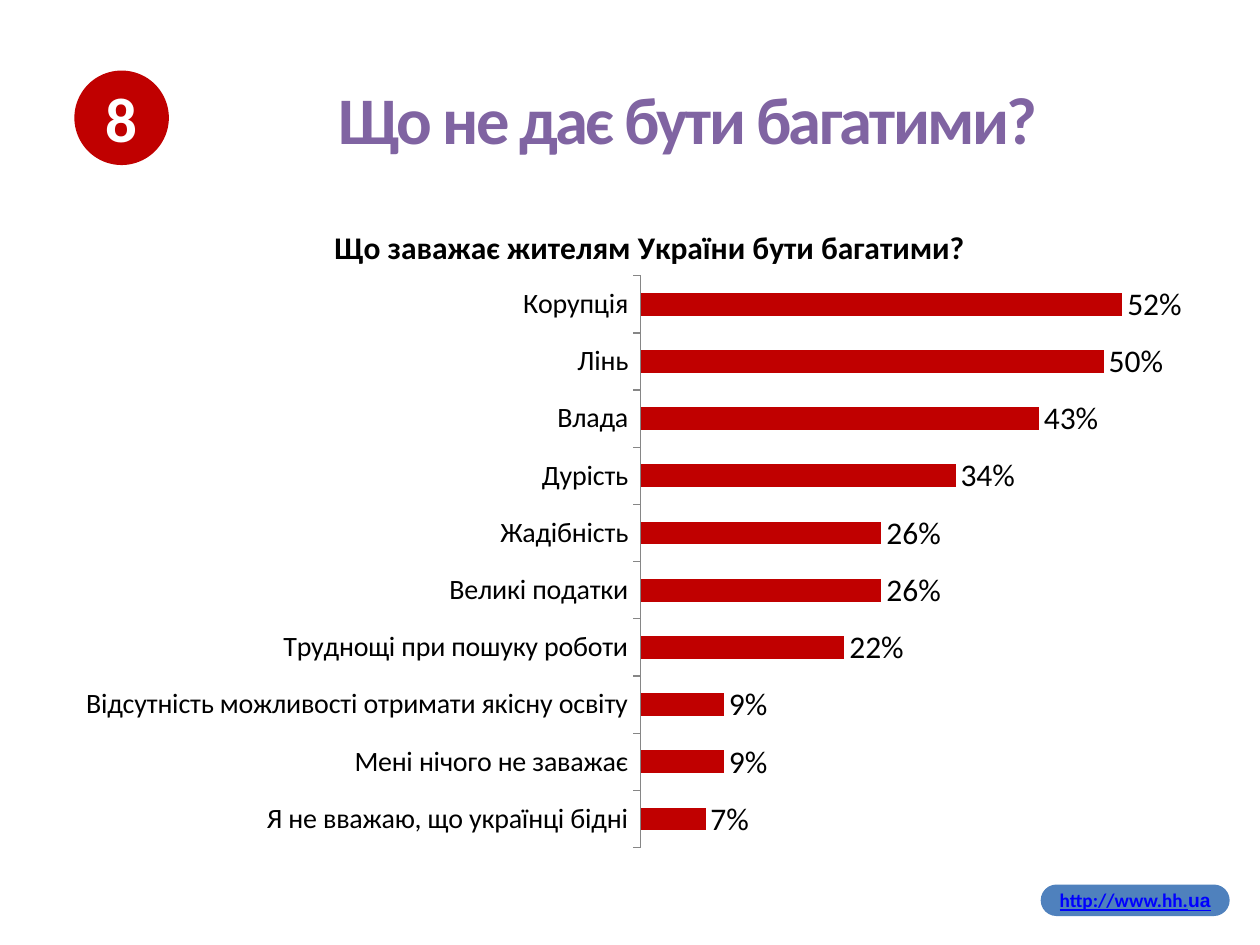
from dataclasses import dataclass

from lxml.etree import SubElement
from pptx import Presentation
from pptx.chart.data import CategoryChartData
from pptx.dml.color import RGBColor
from pptx.enum.chart import XL_CHART_TYPE as ChartType
from pptx.enum.chart import XL_LABEL_POSITION as LabelPosition
from pptx.enum.chart import XL_TICK_MARK as TickMark
from pptx.enum.shapes import MSO_SHAPE as Preset
from pptx.enum.text import MSO_ANCHOR as Anchor
from pptx.enum.text import PP_ALIGN as Align
from pptx.oxml.ns import qn
from pptx.util import Inches, Pt


@dataclass(frozen=True)
class Theme:
    font: str = "Calibri"
    link_end_font: str = "Arial"
    red: RGBColor = RGBColor(0xC0, 0x00, 0x00)
    purple: RGBColor = RGBColor(0x80, 0x64, 0xA2)
    blue: RGBColor = RGBColor(0x4F, 0x81, 0xBD)
    link: RGBColor = RGBColor(0x00, 0x00, 0xFF)
    white: RGBColor = RGBColor(0xFF, 0xFF, 0xFF)
    black: RGBColor = RGBColor(0x00, 0x00, 0x00)
    axis: RGBColor = RGBColor(0x86, 0x86, 0x86)
    title_size: int = 38
    badge_size: int = 36
    chart_size: int = 18
    category_size: int = 16
    address_size: int = 11


THEME = Theme()

OBSTACLES = [
    ("Корупція", 0.52),
    ("Лінь", 0.50),
    ("Влада", 0.43),
    ("Дурість", 0.34),
    ("Жадібність", 0.26),
    ("Великі податки", 0.26),
    ("Труднощі при пошуку роботи", 0.22),
    ("Відсутність можливості отримати якісну освіту", 0.09),
    ("Мені нічого не заважає", 0.09),
    ("Я не вважаю, що українці бідні", 0.07),
]


def place(shape, left, top, width, height):
    shape.left, shape.top = Inches(left), Inches(top)
    shape.width, shape.height = Inches(width), Inches(height)


def format_font(font, size, color, bold=False):
    font.name = THEME.font
    font.size = Pt(size)
    font.bold = bold
    font.color.rgb = color


def format_line(shape, size, color, spacing=0):
    """Centre the shape's single bold line; spacing is in points."""
    frame = shape.text_frame
    frame.word_wrap = False
    frame.vertical_anchor = Anchor.MIDDLE
    paragraph = frame.paragraphs[0]
    paragraph.alignment = Align.CENTER
    for run in paragraph.runs:
        format_font(run.font, size, color, bold=True)
        if spacing:
            run.font._element.set("spc", str(round(spacing * 100)))


def add_filled_shape(slide, preset, box, fill, text):
    shape = slide.shapes.add_shape(preset, *map(Inches, box))
    shape.shadow.inherit = False
    shape.fill.solid()
    shape.fill.fore_color.rgb = fill
    shape.line.fill.background()
    shape.text_frame.text = text
    return shape


def add_title(slide, text):
    title = slide.shapes.title
    place(title, 1.42, 0.31, 8.08, 1.25)
    title.text_frame.text = text
    format_line(title, THEME.title_size, THEME.purple, spacing=-1.5)


def add_badge(slide, number):
    badge = add_filled_shape(slide, Preset.OVAL, (0.59, 0.56, 0.75, 0.75), THEME.red, number)
    format_line(badge, THEME.badge_size, THEME.white, spacing=-1)


def add_address(slide, start, end):
    pill = add_filled_shape(
        slide, Preset.ROUNDED_RECTANGLE, (8.26, 7.02, 1.5, 0.25), THEME.blue, start)
    pill.adjustments[0] = 0.5
    paragraph = pill.text_frame.paragraphs[0]
    paragraph.add_run().text = end
    format_line(pill, THEME.address_size, THEME.link)
    for run in paragraph.runs:
        run.font.underline = True
    paragraph.runs[-1].font.name = THEME.link_end_font


def set_layout(element, index, **settings):
    """Give a chart part a manual layout, as fractions of the chart."""
    for old in element.findall(qn("c:layout")):
        element.remove(old)
    layout = SubElement(element, qn("c:layout"))
    element.insert(index, layout)
    manual = SubElement(layout, qn("c:manualLayout"))
    for name, value in settings.items():
        SubElement(manual, qn(f"c:{name}")).set("val", str(value))


def add_bar_chart(slide, title, rows):
    data = CategoryChartData(number_format="0%")
    bottom_up = rows[::-1]
    data.categories = [name for name, _ in bottom_up]
    data.add_series("Series 1", [value for _, value in bottom_up])
    box = map(Inches, (0.5, 1.53, 9.17, 5.31))
    chart = slide.shapes.add_chart(ChartType.BAR_CLUSTERED, *box, data).chart
    format_font(chart.font, THEME.chart_size, THEME.black)
    chart.has_legend = False

    chart.has_title = True
    chart.chart_title.text_frame.text = title
    title_run = chart.chart_title.text_frame.paragraphs[0].runs[0]
    format_font(title_run.font, THEME.chart_size, THEME.black, bold=True)
    set_layout(chart.chart_title._element, 1, xMode="edge", yMode="edge", x=0.23, y=0.04)
    set_layout(chart._chartSpace.chart.plotArea, 0, layoutTarget="inner",
               xMode="edge", yMode="edge", x=0.5, y=0.124, w=0.481, h=0.855)

    categories = chart.category_axis
    categories.major_tick_mark = TickMark.OUTSIDE
    categories.format.line.color.rgb = THEME.axis
    format_font(categories.tick_labels.font, THEME.category_size, THEME.black)
    values = chart.value_axis
    values.visible = False
    values.has_major_gridlines = False
    values.minimum_scale, values.maximum_scale = 0, 0.6

    plot = chart.plots[0]
    plot.gap_width = 150
    plot.vary_by_categories = False
    fill = plot.series[0].format.fill
    fill.solid()
    fill.fore_color.rgb = THEME.red
    labels = plot.series[0].data_labels
    labels.show_value = True
    labels.number_format = "0%"
    labels.number_format_is_linked = False
    labels.position = LabelPosition.OUTSIDE_END
    format_font(labels.font, THEME.chart_size, THEME.black)


def main():
    presentation = Presentation()
    presentation.slide_width = Inches(10)
    presentation.slide_height = Inches(7.5)
    slide = presentation.slides.add_slide(presentation.slide_layouts.get_by_name("Title Only"))
    add_address(slide, "http://www.hh.", "ua")
    add_badge(slide, "8")
    add_title(slide, "Що не дає бути багатими?")
    add_bar_chart(slide, "Що заважає жителям України бути багатими?", OBSTACLES)
    presentation.save("out.pptx")


if __name__ == "__main__":
    main()
